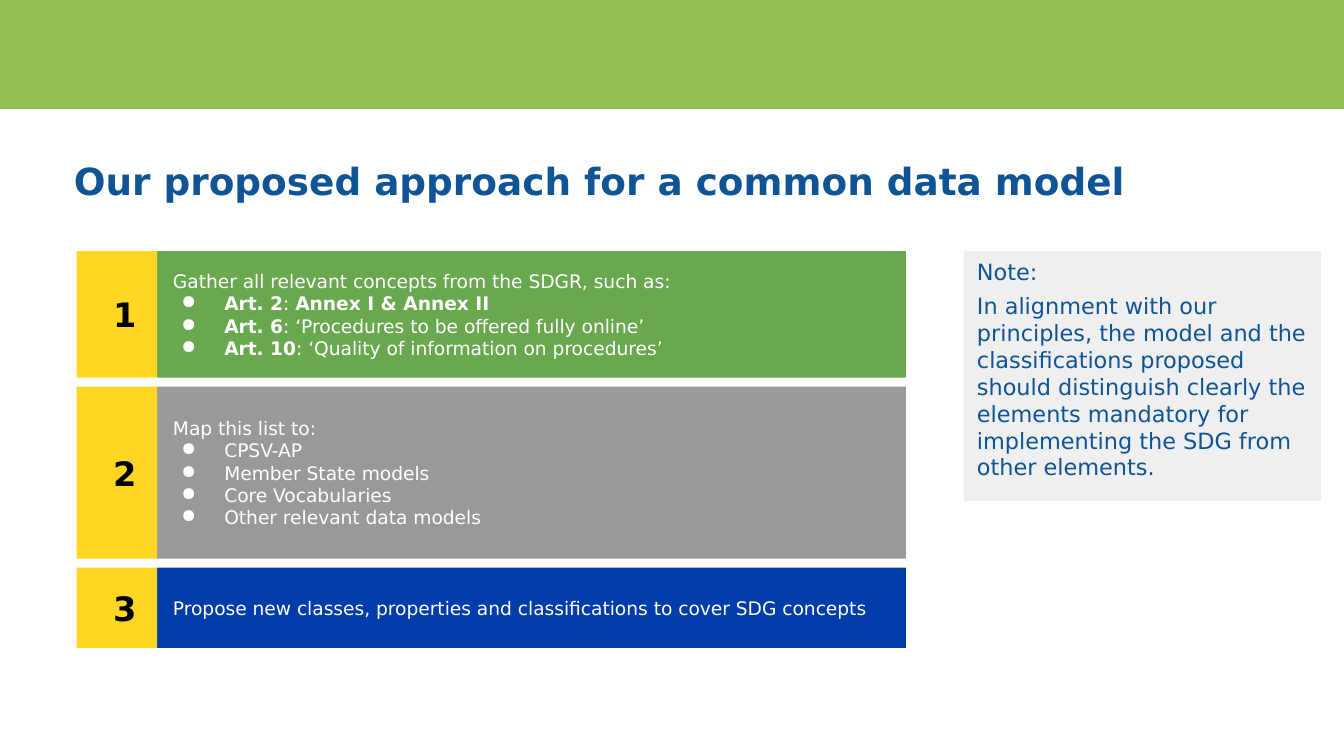
from lxml.etree import SubElement
from pptx import Presentation
from pptx.dml.color import RGBColor
from pptx.enum.shapes import MSO_SHAPE as Preset
from pptx.enum.text import MSO_ANCHOR as Anchor, MSO_AUTO_SIZE as AutoSize, PP_ALIGN as Align
from pptx.oxml.ns import qn
from pptx.util import Cm, Pt

FONT = "DejaVu Sans"
NAVY, WHITE, BLACK, YELLOW = "0F5494", "FFFFFF", "000000", "FFD624"
LEFT, TOP, GAP = 1.45, 4.75, 0.17
NUMBER_WIDTH, STEP_WIDTH = 1.52, 14.15

STEPS = [
    ("6AA84F", 2.39, "Gather all relevant concepts from the SDGR, such as:", [
        "**Art. 2**: **Annex I & Annex II**",
        "**Art. 6**: ‘Procedures to be offered fully online’",
        "**Art. 10**: ‘Quality of information on procedures’",
    ]),
    ("999999", 3.25, "Map this list to:", [
        "CPSV-AP",
        "Member State models",
        "Core Vocabularies",
        "Other relevant data models",
    ]),
    ("003DAB", 1.52, "Propose new classes, properties and classifications to cover SDG concepts", []),
]
NOTE = [
    "Note:",
    "In alignment with our principles, the model and the classifications proposed "
    "should distinguish clearly the elements mandatory for implementing the SDG from other elements.",
]


def paint(target, color):
    """Fill a shape with a solid hex color."""
    target.fill.solid()
    target.fill.fore_color.rgb = RGBColor.from_string(color)


def place(box, left, top, width, height):
    """Move and size a placeholder, in centimetres."""
    box.left, box.top, box.width, box.height = map(Cm, (left, top, width, height))


def set_font(para, size, color, bold=False):
    """Set the font that all runs of a paragraph share."""
    font = para.font
    font.name, font.size, font.bold = FONT, Pt(size), bold
    font.color.rgb = RGBColor.from_string(color)


def set_bullet(para, left, hanging, symbol=None):
    """Indent a paragraph and give it a bullet symbol, or none."""
    props = para._p.get_or_add_pPr()
    props.set("marL", str(Cm(left)))
    props.set("indent", str(-Cm(hanging)))
    bullet = SubElement(props, qn("a:buChar" if symbol else "a:buNone"))
    if symbol:
        bullet.set("char", symbol)
    defaults = props.find(qn("a:defRPr"))
    if defaults is not None:
        props.append(defaults)


def add_spans(para, text):
    """Add runs, with the parts between double asterisks in bold."""
    for index, part in enumerate(text.split("**")):
        if part:
            span = para.add_run()
            span.text = part
            if index % 2:
                span.font.bold = True


def write(frame, texts):
    """Write one paragraph per text and return the paragraphs."""
    for index, text in enumerate(texts):
        add_spans(frame.add_paragraph() if index else frame.paragraphs[0], text)
    return frame.paragraphs


def add_block(page, left, top, width, height, color):
    """Add a plain rectangle with middle-anchored text and no margins."""
    box = page.shapes.add_shape(Preset.RECTANGLE, *map(Cm, (left, top, width, height)))
    box.shadow.inherit = False
    box.line.fill.background()
    paint(box, color)
    frame = box.text_frame
    frame.word_wrap = True
    frame.vertical_anchor = Anchor.MIDDLE
    frame.margin_left = frame.margin_right = frame.margin_top = frame.margin_bottom = 0
    return box


def add_step(page, number, top, height, color, lead, items):
    """Add a numbered step with its lead sentence and bullet list."""
    box = add_block(page, LEFT + NUMBER_WIDTH, top, STEP_WIDTH, height, color)
    for index, para in enumerate(write(box.text_frame, [lead, *items])):
        para.alignment = Align.LEFT
        set_font(para, 10, WHITE)
        if index:
            set_bullet(para, 1.27, 0.81, "●")
        else:
            set_bullet(para, 0.3, 0)
    label = add_block(page, LEFT, top, NUMBER_WIDTH, height, YELLOW)
    para = write(label.text_frame, [str(number)])[0]
    para.alignment = Align.CENTER
    set_font(para, 18, BLACK, bold=True)
    set_bullet(para, 0.3, 0)


def fill_title(title, text):
    """Place and format the slide title."""
    place(title, 1.14, 2.44, 23.98, 1.96)
    title.text_frame.auto_size = AutoSize.NONE
    title.text_frame.vertical_anchor = Anchor.MIDDLE
    para = write(title.text_frame, [text])[0]
    para.alignment = Align.LEFT
    set_font(para, 20, NAVY, bold=True)


def fill_note(note, texts):
    """Place and format the note beside the steps."""
    place(note, 18.21, TOP, 6.76, 4.72)
    paint(note, "EFEFEF")
    note.text_frame.auto_size = AutoSize.NONE
    for para in write(note.text_frame, texts):
        para.space_before = Pt(4)
        set_font(para, 12, NAVY)
        set_bullet(para, 0, 0)


def main():
    """Build the slide and save the deck."""
    deck = Presentation()
    deck.slide_width, deck.slide_height = Cm(25.4), Cm(14.29)
    page = deck.slides.add_slide(deck.slide_layouts[1])
    add_block(page, 0, 0, 25.4, 2.06, "95C154")
    fill_title(page.shapes.title, "Our proposed approach for a common data model")
    top = TOP
    for number, (color, height, lead, items) in enumerate(STEPS, 1):
        add_step(page, number, top, height, color, lead, items)
        top += height + GAP
    fill_note(page.placeholders[1], NOTE)
    deck.save("out.pptx")


if __name__ == "__main__":
    main()
